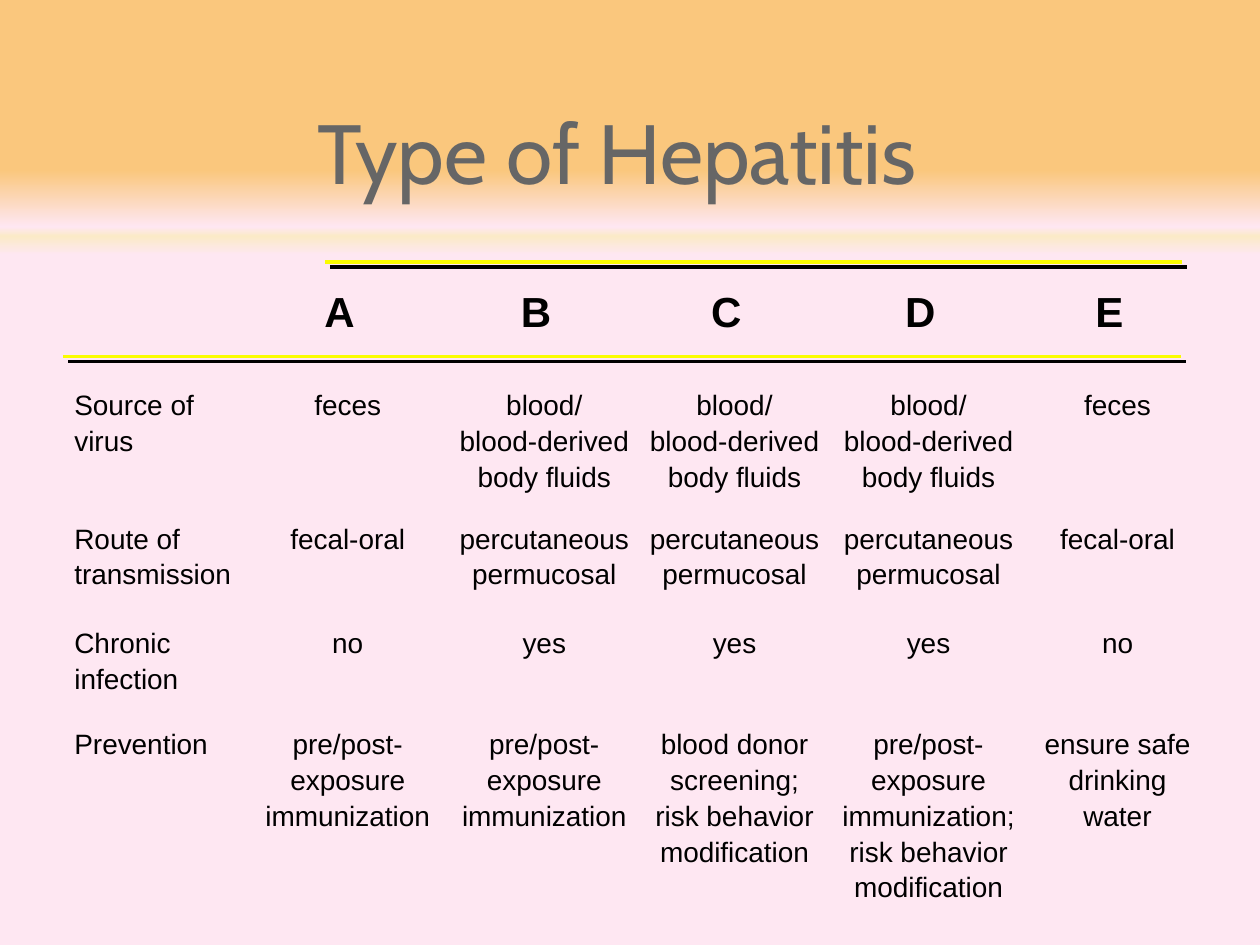
from copy import deepcopy

from lxml import etree
from pptx import Presentation
from pptx.dml.color import RGBColor
from pptx.enum.shapes import MSO_CONNECTOR
from pptx.enum.text import MSO_ANCHOR, MSO_AUTO_SIZE, PP_ALIGN
from pptx.oxml.ns import qn
from pptx.util import Inches, Pt

LEFT, CENTER = PP_ALIGN.LEFT, PP_ALIGN.CENTER
TOP = MSO_ANCHOR.TOP
NO_AUTOFIT = MSO_AUTO_SIZE.NONE
STRAIGHT = MSO_CONNECTOR.STRAIGHT

BLACK = RGBColor(0x00, 0x00, 0x00)
GRAY = RGBColor(0x66, 0x66, 0x66)
YELLOW = RGBColor(0xFA, 0xFD, 0x00)
ORANGE = RGBColor(0xFA, 0xC7, 0x7D)
PINK = RGBColor(0xFE, 0xE7, 0xF2)
CREAM = RGBColor(0xFB, 0xEA, 0xC7)

BACKGROUND_STOPS = [(0.18, ORANGE), (0.24, PINK), (0.25, CREAM), (0.27, PINK)]
PLAIN_TABLE_STYLE = "{2D5ABB26-0587-4C30-8999-92F81FD0307C}"

TITLE_BOX = (2.42, 0.75, 5.53, 0.9)
TABLE_ORIGIN = (0.59, 2.25)
COLUMN_WIDTHS = [1.39, 1.56, 1.56, 1.46, 1.62, 1.38]
ROW_HEIGHTS = [0.81, 1.06, 0.83, 0.8, 1.5]
RULES = [(2.58, 9.38, 2.08), (0.5, 9.37, 2.83)]

BLOOD = "blood/\nblood-derived\nbody fluids"
THROUGH_SKIN = "percutaneous\npermucosal"
IMMUNIZATION = "pre/post-\nexposure\nimmunization"
RISK = "risk behavior\nmodification"
HEPATITIS = [
    ["", "A", "B", "C", "D", "E"],
    ["Source of\nvirus", "feces", BLOOD, BLOOD, BLOOD, "feces"],
    ["Route of\ntransmission", "fecal-oral", THROUGH_SKIN, THROUGH_SKIN,
     THROUGH_SKIN, "fecal-oral"],
    ["Chronic\ninfection", "no", "yes", "yes", "yes", "no"],
    ["Prevention", IMMUNIZATION, IMMUNIZATION,
     f"blood donor\nscreening;\n{RISK}", f"{IMMUNIZATION};\n{RISK}",
     "ensure safe\ndrinking\nwater"],
]


def style_font(font, name, size, color, bold=False):
    """Set the face, size, colour and weight of a font."""
    font.name, font.size, font.bold = name, Pt(size), bold
    font.color.rgb = color


def paint_background(slide):
    """Fill the slide with a vertical gradient."""
    fill = slide.background.fill
    fill.gradient()
    fill.gradient_angle = 270
    stop_list = slide.element.find(".//" + qn("a:gsLst"))
    while len(stop_list) < len(BACKGROUND_STOPS):
        stop_list.append(deepcopy(stop_list[0]))
    for stop, (position, color) in zip(fill.gradient_stops, BACKGROUND_STOPS):
        stop.position = position
        stop.color.rgb = color


def place_title(slide, box):
    """Place the slide title in the given box."""
    title = slide.shapes.title
    title.left, title.top, title.width, title.height = map(Inches, box)
    frame = title.text_frame
    frame.text = "Type of Hepatitis"
    frame.auto_size = NO_AUTOFIT
    frame.vertical_anchor = TOP
    heading = frame.paragraphs[0]
    heading.alignment = LEFT
    heading.line_spacing = 1.0
    style_font(heading.runs[0].font, "Cabin", 48, GRAY)


def fill_cell(cell, text, is_header, is_label):
    """Write one cell as a type heading, a row label or a value."""
    cell.fill.background()
    cell.vertical_anchor = TOP
    cell.margin_left = cell.margin_bottom = 0
    cell.margin_top = Inches(0.05 if is_header else 0)
    cell.margin_right = Inches(0.13 if is_header else 0)
    cell.text_frame.text = text
    for line in cell.text_frame.paragraphs:
        line.alignment = LEFT if is_label else CENTER
        if not is_header:
            line.line_spacing = Pt(20.5)
        for run in line.runs:
            style_font(run.font, "Arial", 24 if is_header else 16, BLACK, is_header)


def place_comparison(slide, origin):
    """Build the table that compares the hepatitis types."""
    extent = (sum(COLUMN_WIDTHS), sum(ROW_HEIGHTS))
    frame = slide.shapes.add_table(
        len(ROW_HEIGHTS), len(COLUMN_WIDTHS), *map(Inches, origin + extent))
    table = frame.table
    table.first_row = table.horz_banding = False
    frame._element.find(".//" + qn("a:tableStyleId")).text = PLAIN_TABLE_STYLE
    for column, width in zip(table.columns, COLUMN_WIDTHS):
        column.width = Inches(width)
    for row, height in zip(table.rows, ROW_HEIGHTS):
        row.height = Inches(height)
    for r, entries in enumerate(HEPATITIS):
        for c, text in enumerate(entries):
            fill_cell(table.cell(r, c), text, r == 0, c == 0)


def place_rule(slide, start, end, y):
    """Draw a yellow horizontal rule with a hard black shadow."""
    rule = slide.shapes.add_connector(STRAIGHT, *map(Inches, (start, y, end, y)))
    rule.line.color.rgb = YELLOW
    rule.line.width = Pt(2)
    effects = etree.SubElement(rule._element.spPr, qn("a:effectLst"))
    shadow = etree.SubElement(
        effects, qn("a:outerShdw"), blurRad="0", dist=str(Pt(4.2)),
        dir="2700000", algn="ctr", rotWithShape="0")
    etree.SubElement(shadow, qn("a:srgbClr"), val=str(BLACK))


def main():
    """Build and save the slide."""
    deck = Presentation()
    deck.slide_width, deck.slide_height = Inches(10), Inches(7.5)
    slide = deck.slides.add_slide(deck.slide_layouts[5])
    paint_background(slide)
    place_title(slide, TITLE_BOX)
    place_comparison(slide, TABLE_ORIGIN)
    for start, end, y in RULES:
        place_rule(slide, start, end, y)
    deck.save("out.pptx")


if __name__ == "__main__":
    main()
